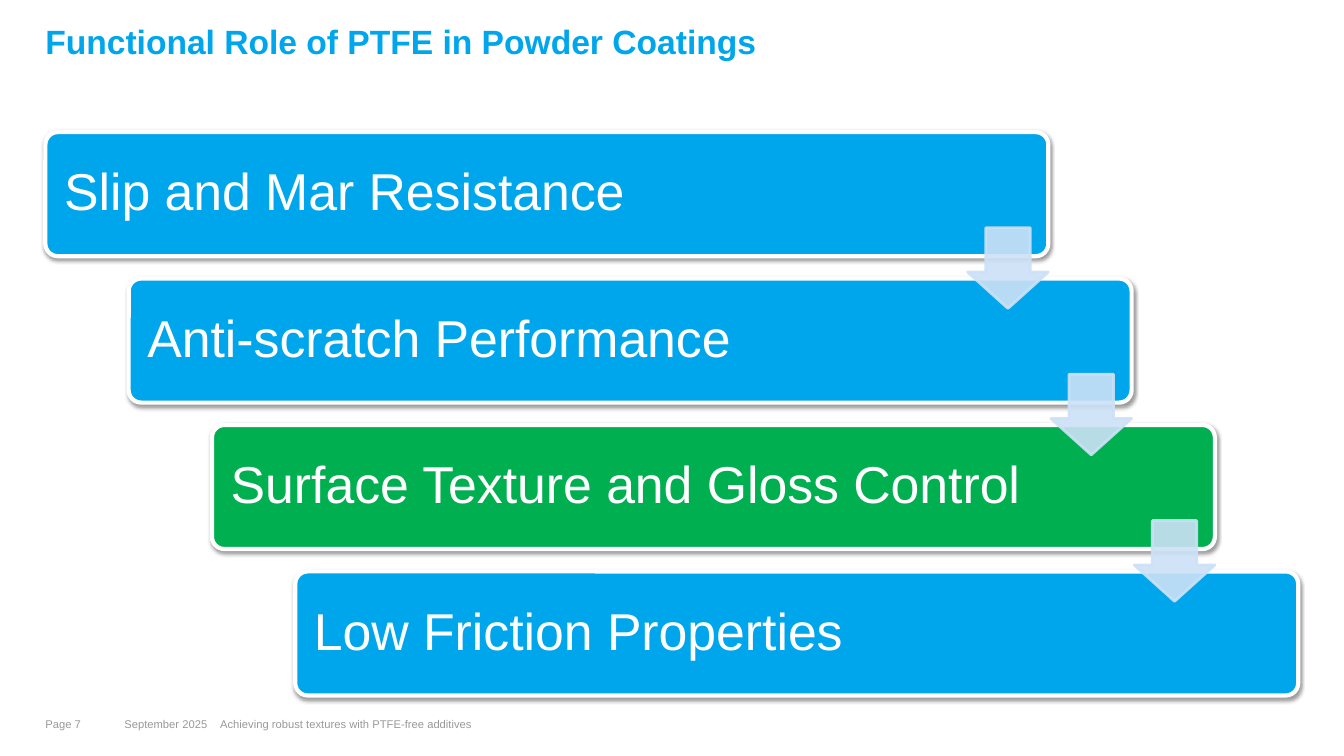
from lxml.etree import SubElement
from pptx import Presentation
from pptx.dml.color import RGBColor
from pptx.enum.shapes import MSO_SHAPE
from pptx.enum.text import MSO_ANCHOR, PP_ALIGN
from pptx.oxml.ns import qn
from pptx.util import Pt

BLUE = RGBColor(0x00, 0xA6, 0xEB)
GREEN = RGBColor(0x00, 0xB0, 0x50)
PALE = RGBColor(0xCC, 0xE1, 0xF7)
GRAY = RGBColor(0x99, 0x99, 0x99)
WHITE = RGBColor(0xFF, 0xFF, 0xFF)
BLACK = RGBColor(0x00, 0x00, 0x00)

LEFT, TOP = 32.4, 94.4
STEP_X, STEP_Y = 59.5, 104.6
BAR_W, BAR_H = 716.4, 88.6
ARROW = 57.6


def write(shape, text, size, color, inset=0, top=0, bold=False):
    frame = shape.text_frame
    frame.word_wrap = True
    frame.margin_left = frame.margin_right = Pt(inset)
    frame.margin_top, frame.margin_bottom = Pt(top), Pt(0)
    frame.text = text
    line = frame.paragraphs[0]
    line.alignment = PP_ALIGN.LEFT
    font = line.runs[0].font
    font.name, font.size, font.bold = "Arial", Pt(size), bold
    font.color.rgb = color
    return line


def draw(kind, left, top, width, height, fill, edge, weight):
    shape = slide.shapes.add_shape(kind, Pt(left), Pt(top), Pt(width), Pt(height))
    shape.shadow.inherit = False
    shape.fill.solid()
    shape.fill.fore_color.rgb = fill
    shape.line.color.rgb = edge
    shape.line.width = Pt(weight)
    return shape


deck = Presentation()
deck.slide_width, deck.slide_height = Pt(960), Pt(540)
slide = deck.slides.add_slide(deck.slide_layouts[6])

title = slide.shapes.add_textbox(Pt(LEFT), Pt(15.1), Pt(895.7), Pt(79.2))
head = write(title, "Functional Role of PTFE in Powder Coatings", 24, BLUE, top=2.9, bold=True)
head.line_spacing = 0.9

footer = [
    ("Page 7", LEFT, 49),
    ("September 2025", 88.8, 62.6),
    ("Achieving robust textures with PTFE-free additives", 157.2, 646.6),
]
for text, left, width in footer:
    box = slide.shapes.add_textbox(Pt(left), Pt(512.6), Pt(width), Pt(11.5))
    write(box, text, 8, GRAY)

roles = [
    ("Slip and Mar Resistance", BLUE),
    ("Anti-scratch Performance", BLUE),
    ("Surface Texture and Gloss Control", GREEN),
    ("Low Friction Properties", BLUE),
]
for i, (text, color) in enumerate(roles):
    bar = draw(MSO_SHAPE.ROUNDED_RECTANGLE, LEFT + i * STEP_X, TOP + i * STEP_Y,
               BAR_W, BAR_H, color, WHITE, 3)
    bar.adjustments[0] = 0.1
    effects = bar.element.spPr.find(qn("a:effectLst"))
    shade = SubElement(effects, qn("a:outerShdw"), blurRad=str(Pt(3.1)),
                       dist=str(Pt(1.6)), dir="5400000", rotWithShape="0")
    tint = SubElement(shade, qn("a:srgbClr"), val=str(BLACK))
    SubElement(tint, qn("a:alpha"), val="38000")
    write(bar, text, 37, WHITE, inset=10.8).line_spacing = 0.9
    bar.text_frame.vertical_anchor = MSO_ANCHOR.MIDDLE

for i in range(len(roles) - 1):
    arrow = draw(MSO_SHAPE.DOWN_ARROW, LEFT + BAR_W - ARROW + i * STEP_X,
                 162.7 + i * STEP_Y, ARROW, ARROW, PALE, PALE, 2)
    arrow.adjustments[0] = 0.55
    arrow.adjustments[1] = 0.45
    for tint in arrow.element.spPr.iter(qn("a:srgbClr")):
        SubElement(tint, qn("a:alpha"), val="90000")

deck.save("out.pptx")
